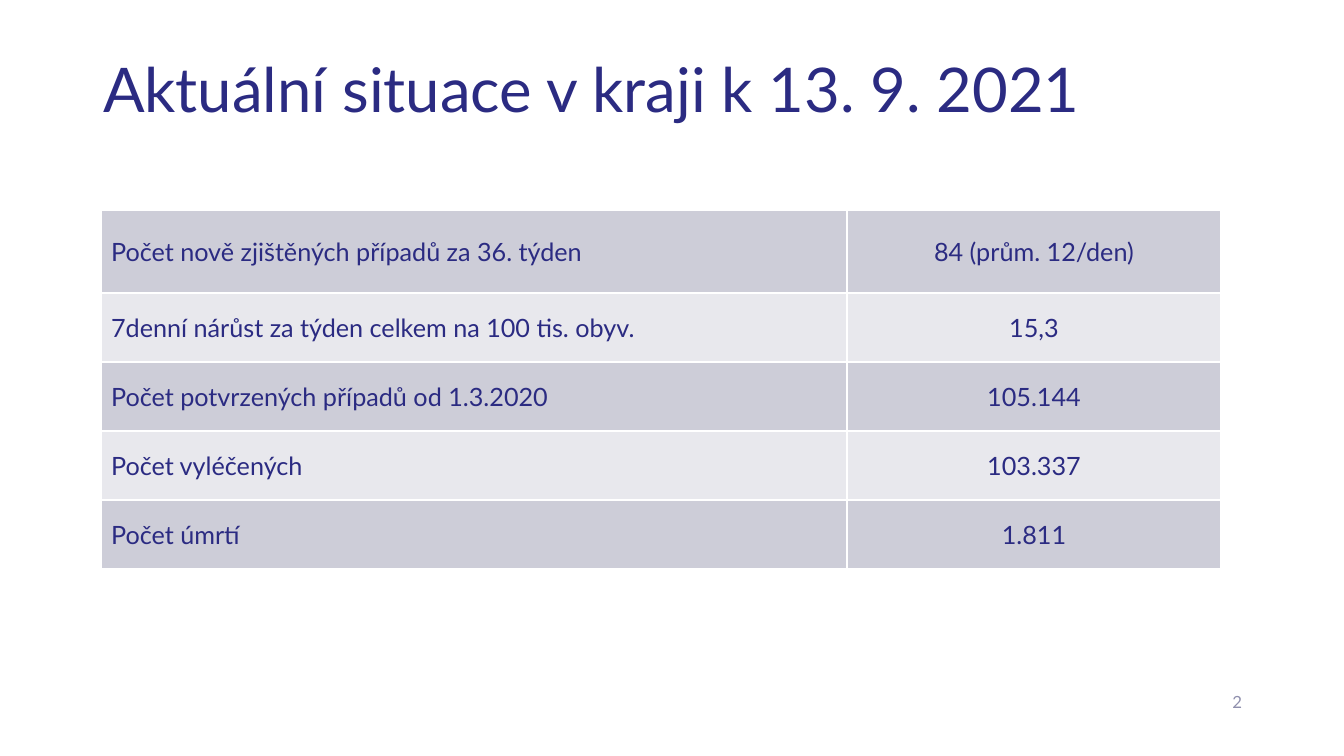
from dataclasses import dataclass

from lxml import etree
from pptx import Presentation
from pptx import util as u
from pptx.dml.color import RGBColor
from pptx.enum import text
from pptx.oxml.ns import qn

PX_PER_INCH = 100.8
TITLE_ONLY = 5


@dataclass(frozen=True)
class Theme:
    font: str = "Lato"
    ink: str = "2B2B82"
    muted: str = "8F8FAD"
    bands: tuple = ("CDCDD8", "E8E8ED")
    border: str = "FFFFFF"
    title_size: int = 44
    body_size: int = 18
    number_size: int = 12


THEME = Theme()

SITUATION = [
    ("Počet nově zjištěných případů za 36. týden", "84 (prům. 12/den)"),
    ("7denní nárůst za týden celkem na 100 tis. obyv.", "15,3"),
    ("Počet potvrzených případů od 1.3.2020", "105.144"),
    ("Počet vyléčených", "103.337"),
    ("Počet úmrtí", "1.811"),
]
COLUMN_WIDTHS = (746, 374)
FIRST_ROW_HEIGHT, ROW_HEIGHT = 83, 69


def px(length):
    return u.Emu(round(length * u.Inches(1) / PX_PER_INCH))


def write(frame, content, *, size, color=THEME.ink, align=text.PP_ALIGN.LEFT, spacing=None):
    """Put one formatted paragraph into a text frame."""
    paragraph = frame.paragraphs[0]
    paragraph.alignment = align
    if spacing:
        paragraph.line_spacing = spacing
    run = paragraph.add_run()
    run.text = content
    run.font.name = THEME.font
    run.font.size = u.Pt(size)
    run.font.color.rgb = RGBColor.from_string(color)


def add_title(slide, content, left, top, width, height):
    title = slide.shapes.title
    title.left, title.top, title.width, title.height = map(px, (left, top, width, height))
    frame = title.text_frame
    frame.word_wrap = True
    frame.auto_size = text.MSO_AUTO_SIZE.NONE
    frame.vertical_anchor = text.MSO_ANCHOR.BOTTOM
    write(frame, content, size=THEME.title_size, spacing=0.9)


def add_page_number(slide, number, left, top, width, height):
    frame = slide.shapes.add_textbox(*map(px, (left, top, width, height))).text_frame
    frame.word_wrap = True
    frame.vertical_anchor = text.MSO_ANCHOR.MIDDLE
    write(frame, number, size=THEME.number_size, color=THEME.muted,
          align=text.PP_ALIGN.RIGHT)


def set_borders(cell):
    """Outline all four sides; call before filling, as the schema puts lines first."""
    properties = cell._tc.get_or_add_tcPr()
    for side in ("lnL", "lnR", "lnT", "lnB"):
        line = etree.SubElement(properties, qn(f"a:{side}"), w=str(u.Pt(1)))
        fill = etree.SubElement(line, qn("a:solidFill"))
        etree.SubElement(fill, qn("a:srgbClr"), val=THEME.border)


def format_cell(cell, content, fill, align):
    set_borders(cell)
    cell.fill.solid()
    cell.fill.fore_color.rgb = RGBColor.from_string(fill)
    cell.vertical_anchor = text.MSO_ANCHOR.MIDDLE
    write(cell.text_frame, content, size=THEME.body_size, align=align)


def add_situation_table(slide, left, top):
    heights = [FIRST_ROW_HEIGHT] + [ROW_HEIGHT] * (len(SITUATION) - 1)
    bounds = map(px, (left, top, sum(COLUMN_WIDTHS), sum(heights)))
    table = slide.shapes.add_table(len(SITUATION), len(COLUMN_WIDTHS), *bounds).table
    table.first_row = table.horz_banding = False
    for column, width in zip(table.columns, COLUMN_WIDTHS):
        column.width = px(width)
    alignments = (text.PP_ALIGN.LEFT, text.PP_ALIGN.CENTER)
    for index, (row, values) in enumerate(zip(table.rows, SITUATION)):
        row.height = px(heights[index])
        band = THEME.bands[index % len(THEME.bands)]
        for cell, value, align in zip(row.cells, values, alignments):
            format_cell(cell, value, band, align)


def main():
    presentation = Presentation()
    presentation.slide_width, presentation.slide_height = px(1344), px(756)
    slide = presentation.slides.add_slide(presentation.slide_layouts[TITLE_ONLY])
    add_title(slide, "Aktuální situace v kraji k 13. 9. 2021", 93, 30, 1159, 101)
    add_page_number(slide, "2", 1137, 682, 115, 40)
    add_situation_table(slide, 101, 210)
    presentation.save("out.pptx")


if __name__ == "__main__":
    main()
